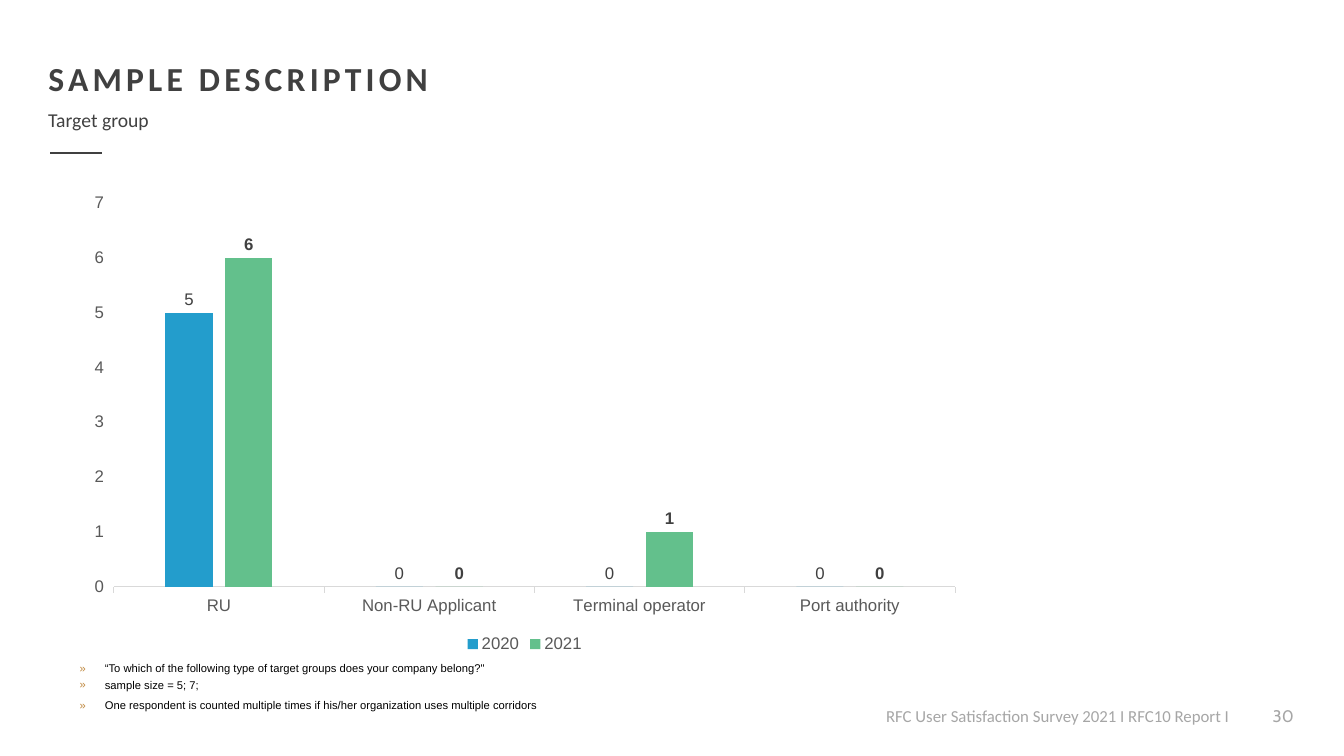
from dataclasses import dataclass

from lxml.etree import SubElement
from pptx import Presentation
from pptx.chart.data import CategoryChartData
from pptx.dml.color import RGBColor
from pptx.enum.chart import XL_CHART_TYPE, XL_LABEL_POSITION, XL_LEGEND_POSITION, XL_TICK_MARK
from pptx.enum.shapes import MSO_CONNECTOR
from pptx.enum.text import MSO_ANCHOR, MSO_AUTO_SIZE, PP_ALIGN
from pptx.oxml.ns import qn
from pptx.util import Inches, Pt


@dataclass(frozen=True)
class Theme:
    heading_font: str = "Calibri"
    body_font: str = "Arial"
    number_font: str = "Cabin"
    dark: str = "404040"
    axis_text: str = "595959"
    axis_line: str = "D9D9D9"
    footer: str = "A6A6A6"
    black: str = "000000"
    bullet: str = "BF873D"
    series: tuple = ("239DCC", "63C08C")
    title_size: int = 24
    subtitle_size: int = 14
    label_size: int = 12
    chart_size: int = 10
    bullet_size: int = 8


def apply_formats(target, formats):
    for name, value in formats.items():
        setattr(target, name, value)


def format_font(font, name, size, color, bold=False):
    apply_formats(font, {"name": name, "size": Pt(size), "bold": bold})
    font.color.rgb = RGBColor.from_string(color)


class SlideBuilder:
    """Adds themed elements to one slide."""

    def __init__(self, slide, theme):
        self.slide = slide
        self.theme = theme

    def place(self, shape, box):
        sides = ("left", "top", "width", "height")
        apply_formats(shape, dict(zip(sides, map(Inches, box))))

    def title(self, text, box):
        shape = self.slide.shapes.title
        self.place(shape, box)
        frame = shape.text_frame
        apply_formats(frame, {"text": text, "auto_size": MSO_AUTO_SIZE.NONE,
                              "vertical_anchor": MSO_ANCHOR.MIDDLE})
        paragraph = frame.paragraphs[0]
        paragraph.alignment = PP_ALIGN.LEFT
        run = paragraph.runs[0]
        format_font(run.font, self.theme.heading_font, self.theme.title_size, self.theme.dark, True)
        run.font._element.set("spc", "300")

    def text(self, text, box, font, size, color, align=PP_ALIGN.LEFT, wrap=False):
        frame = self.slide.shapes.add_textbox(*map(Inches, box)).text_frame
        frame.word_wrap = wrap
        paragraph = frame.paragraphs[0]
        paragraph.alignment = align
        run = paragraph.add_run()
        run.text = text
        format_font(run.font, font, size, color)

    def rule(self, left, top, right):
        connector = self.slide.shapes.add_connector(
            MSO_CONNECTOR.STRAIGHT, Inches(left), Inches(top), Inches(right), Inches(top))
        connector.line.color.rgb = RGBColor.from_string(self.theme.dark)
        connector.line.width = Pt(1.5)
        SubElement(connector._element.spPr, qn("a:effectLst"))

    def bullet_list(self, items, box):
        shape = self.slide.placeholders[1]
        self.place(shape, box)
        frame = shape.text_frame
        apply_formats(frame, {"text": "\n".join(text for text, _ in items),
                              "auto_size": MSO_AUTO_SIZE.NONE,
                              "vertical_anchor": MSO_ANCHOR.TOP})
        for paragraph, (_, gap) in zip(frame.paragraphs, items):
            apply_formats(paragraph, {"line_spacing": 0.9, "space_before": Pt(gap)})
            format_font(paragraph.runs[0].font, self.theme.body_font,
                        self.theme.bullet_size, self.theme.black)
            properties = paragraph._p.get_or_add_pPr()
            properties.set("marL", str(Inches(0.25)))
            properties.set("indent", str(Inches(-0.25)))
            bullet_color = SubElement(properties, qn("a:buClr"))
            SubElement(bullet_color, qn("a:srgbClr"), val=self.theme.bullet)
            SubElement(properties, qn("a:buFont"), typeface=self.theme.body_font)
            SubElement(properties, qn("a:buChar"), char="»")

    def column_chart(self, categories, values, box):
        theme = self.theme
        data = CategoryChartData(number_format="General")
        data.categories = categories
        for name, numbers in values.items():
            data.add_series(name, numbers)
        chart = self.slide.shapes.add_chart(
            XL_CHART_TYPE.COLUMN_CLUSTERED, *map(Inches, box), data).chart
        apply_formats(chart, {"has_title": False, "has_legend": True})
        format_font(chart.font, theme.body_font, theme.chart_size, theme.black)
        apply_formats(chart.legend, {"position": XL_LEGEND_POSITION.BOTTOM,
                                     "include_in_layout": False})
        format_font(chart.legend.font, theme.body_font, theme.label_size, theme.axis_text)

        for axis in (chart.category_axis, chart.value_axis):
            apply_formats(axis, {"has_major_gridlines": False,
                                 "major_tick_mark": XL_TICK_MARK.OUTSIDE,
                                 "minor_tick_mark": XL_TICK_MARK.NONE})
            format_font(axis.tick_labels.font, theme.body_font, theme.label_size, theme.axis_text)
        category_line = chart.category_axis.format.line
        category_line.color.rgb = RGBColor.from_string(theme.axis_line)
        category_line.width = Pt(0.75)
        chart.value_axis.format.line.fill.background()
        apply_formats(chart.value_axis, {"minimum_scale": 0, "maximum_scale": 7, "major_unit": 1})

        plot = chart.plots[0]
        apply_formats(plot, {"gap_width": 219, "overlap": -27, "vary_by_categories": False})
        latest = len(values) - 1
        for index, (series, color) in enumerate(zip(plot.series, theme.series)):
            series.format.fill.solid()
            series.format.fill.fore_color.rgb = RGBColor.from_string(color)
            apply_formats(series.data_labels, {"show_value": True,
                                               "position": XL_LABEL_POSITION.OUTSIDE_END})
            format_font(series.data_labels.font, theme.body_font, theme.label_size,
                        theme.dark, index == latest)


def main():
    presentation = Presentation()
    apply_formats(presentation, {"slide_width": Inches(13.33), "slide_height": Inches(7.5)})
    slide = presentation.slides.add_slide(presentation.slide_layouts[1])
    theme = Theme()
    builder = SlideBuilder(slide, theme)

    builder.title("SAMPLE DESCRIPTION", (0.38, 0.52, 6.98, 0.5))
    builder.text("Target group", (0.38, 1.02, 1.22, 0.34),
                 theme.heading_font, theme.subtitle_size, theme.dark)
    builder.rule(0.5, 1.52, 1.01)
    builder.column_chart(
        ("RU", "Non-RU Applicant", "Terminal operator", "Port authority"),
        {"2020": (5, 0, 0, 0), "2021": (6, 0, 1, 0)},
        (0.76, 1.83, 8.89, 4.69))
    builder.bullet_list(
        (("“To which of the following type of target groups does your company belong?\"", 0),
         ("sample size = 5; 7;", 3),
         ("One respondent is counted multiple times if his/her organization uses multiple corridors", 6)),
        (0.69, 6.53, 5.26, 0.59))
    builder.text("RFC User Satisfaction Survey 2021 I RFC10 Report I", (8.69, 6.95, 3.8, 0.3),
                 theme.heading_font, theme.label_size, theme.footer)
    builder.text("30", (12.31, 6.95, 0.62, 0.4), theme.number_font, theme.label_size,
                 theme.footer, PP_ALIGN.RIGHT, True)
    presentation.save("out.pptx")


if __name__ == "__main__":
    main()
